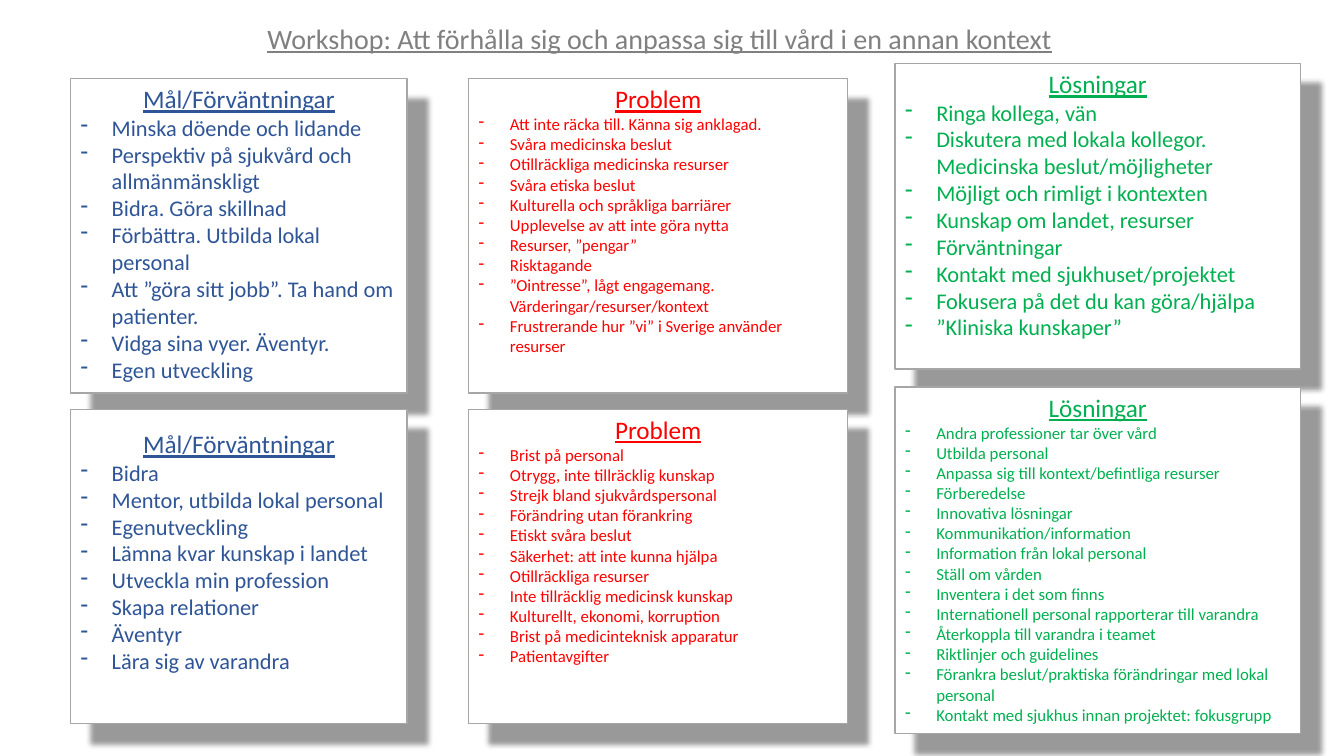
from lxml.etree import SubElement
from pptx import Presentation
from pptx.dml.color import RGBColor
from pptx.enum.shapes import MSO_SHAPE
from pptx.enum.text import MSO_ANCHOR, PP_ALIGN
from pptx.oxml.ns import qn
from pptx.util import Inches, Pt

COLORS = {"blue": "2F5597", "red": "FF0000", "green": "00B050",
          "gray": "808080", "edge": "A6A6A6", "white": "FFFFFF", "black": "000000"}

# Left edge and width of each column, in percent of the slide
COLUMNS = {"blue": (5.25, 25.05), "red": (34.88, 28.2), "green": (66.6, 30.15)}
# Top edge and height of each row, in percent of the slide
UPPER, LOWER = (10.4, 41.6), (54.13, 41.6)
GREEN_UPPER, GREEN_LOWER = (8.4, 40.4), (51.2, 45.87)

GOALS, TROUBLE, ANSWERS = "Mål/Förväntningar", "Problem", "Lösningar"

# Color, row, heading, text size, anchor, bottom inset, items
CARDS = [
    ("blue", UPPER, GOALS, 16, MSO_ANCHOR.TOP, 0.05, [
        "Minska döende och lidande",
        "Perspektiv på sjukvård och allmänmänskligt",
        "Bidra. Göra skillnad",
        "Förbättra. Utbilda lokal personal",
        "Att ”göra sitt jobb”. Ta hand om patienter.",
        "Vidga sina vyer. Äventyr.",
        "Egen utveckling"]),
    ("blue", LOWER, GOALS, 16, MSO_ANCHOR.MIDDLE, 0.35, [
        "Bidra",
        "Mentor, utbilda lokal personal",
        "Egenutveckling",
        "Lämna kvar kunskap i landet",
        "Utveckla min profession",
        "Skapa relationer",
        "Äventyr",
        "Lära sig av varandra"]),
    ("red", UPPER, TROUBLE, 12, MSO_ANCHOR.TOP, 0.05, [
        "Att inte räcka till. Känna sig anklagad.",
        "Svåra medicinska beslut",
        "Otillräckliga medicinska resurser",
        "Svåra etiska beslut",
        "Kulturella och språkliga barriärer",
        "Upplevelse av att inte göra nytta",
        "Resurser, ”pengar”",
        "Risktagande",
        "”Ointresse”, lågt engagemang. Värderingar/resurser/kontext",
        "Frustrerande hur ”vi” i Sverige använder resurser"]),
    ("red", LOWER, TROUBLE, 12, MSO_ANCHOR.TOP, 0.05, [
        "Brist på personal",
        "Otrygg, inte tillräcklig kunskap",
        "Strejk bland sjukvårdspersonal",
        "Förändring utan förankring",
        "Etiskt svåra beslut",
        "Säkerhet: att inte kunna hjälpa",
        "Otillräckliga resurser",
        "Inte tillräcklig medicinsk kunskap",
        "Kulturellt, ekonomi, korruption",
        "Brist på medicinteknisk apparatur",
        "Patientavgifter"]),
    ("green", GREEN_UPPER, ANSWERS, 16, MSO_ANCHOR.TOP, 0.05, [
        "Ringa kollega, vän",
        "Diskutera med lokala kollegor. Medicinska beslut/möjligheter",
        "Möjligt och rimligt i kontexten",
        "Kunskap om landet, resurser",
        "Förväntningar",
        "Kontakt med sjukhuset/projektet",
        "Fokusera på det du kan göra/hjälpa",
        "”Kliniska kunskaper”"]),
    ("green", GREEN_LOWER, ANSWERS, 12, MSO_ANCHOR.TOP, 0.05, [
        "Andra professioner tar över vård",
        "Utbilda personal",
        "Anpassa sig till kontext/befintliga resurser",
        "Förberedelse",
        "Innovativa lösningar",
        "Kommunikation/information",
        "Information från lokal personal",
        "Ställ om vården",
        "Inventera i det som finns",
        "Internationell personal rapporterar till varandra",
        "Återkoppla till varandra i teamet",
        "Riktlinjer och guidelines",
        "Förankra beslut/praktiska förändringar med lokal personal",
        "Kontakt med sjukhus innan projektet: fokusgrupp"]),
]


def rgb(name):
    return RGBColor.from_string(COLORS[name])


class Board:
    font = "Calibri"

    def __init__(self, deck):
        self.deck = deck
        self.slide = deck.slides.add_slide(deck.slide_layouts[6])

    def area(self, column, row):
        """Turn percent spans into left, top, width and height."""
        wide, high = self.deck.slide_width / 100, self.deck.slide_height / 100
        return (round(column[0] * wide), round(row[0] * high),
                round(column[1] * wide), round(row[1] * high))

    def style(self, para, size, color, underline=False):
        font = para.font
        font.name, font.size, font.underline = self.font, Pt(size), underline
        font.color.rgb = rgb(color)

    def heading(self, frame, text, size, color):
        para = frame.paragraphs[0]
        para.text = text
        para.alignment = PP_ALIGN.CENTER
        self.style(para, size, color, True)

    def bullet(self, frame, text, size, color):
        para = frame.add_paragraph()
        para.text = text
        para.alignment = PP_ALIGN.LEFT
        props = para._p.get_or_add_pPr()
        props.set("marL", str(Inches(0.31)))
        props.set("indent", str(-Inches(0.31)))
        SubElement(props, qn("a:buChar"), char="-")
        self.style(para, size, color)

    def shadow(self, shape):
        """Cast a soft shadow down to the right."""
        shape.shadow.inherit = False
        effects = shape._element.spPr.find(qn("a:effectLst"))
        outer = SubElement(effects, qn("a:outerShdw"), blurRad=str(Pt(4)),
                           dist=str(Pt(20)), dir=str(45 * 60000),
                           algn="tl", rotWithShape="0")
        tint = SubElement(outer, qn("a:srgbClr"), val=COLORS["black"])
        SubElement(tint, qn("a:alpha"), val="40000")

    def title(self, text, column, row):
        frame = self.slide.shapes.add_textbox(*self.area(column, row)).text_frame
        frame.word_wrap = True
        frame.vertical_anchor = MSO_ANCHOR.MIDDLE
        self.heading(frame, text, 20, "gray")

    def card(self, color, row, head, size, anchor, inset, items):
        box = self.slide.shapes.add_shape(
            MSO_SHAPE.RECTANGLE, *self.area(COLUMNS[color], row))
        box.fill.solid()
        box.fill.fore_color.rgb = rgb("white")
        box.line.color.rgb = rgb("edge")
        box.line.width = Pt(1)
        self.shadow(box)
        frame = box.text_frame
        frame.word_wrap = True
        frame.vertical_anchor = anchor
        frame.margin_bottom = Inches(inset)
        self.heading(frame, head, 18, color)
        for item in items:
            self.bullet(frame, item, size, color)


def main():
    deck = Presentation()
    deck.slide_width, deck.slide_height = Inches(13.33), Inches(7.5)
    board = Board(deck)
    for card in CARDS:
        board.card(*card)
    board.title("Workshop: Att förhålla sig och anpassa sig till vård i en annan kontext",
                (1.2, 95.78), (1.6, 6.8))
    deck.save("out.pptx")


if __name__ == "__main__":
    main()
